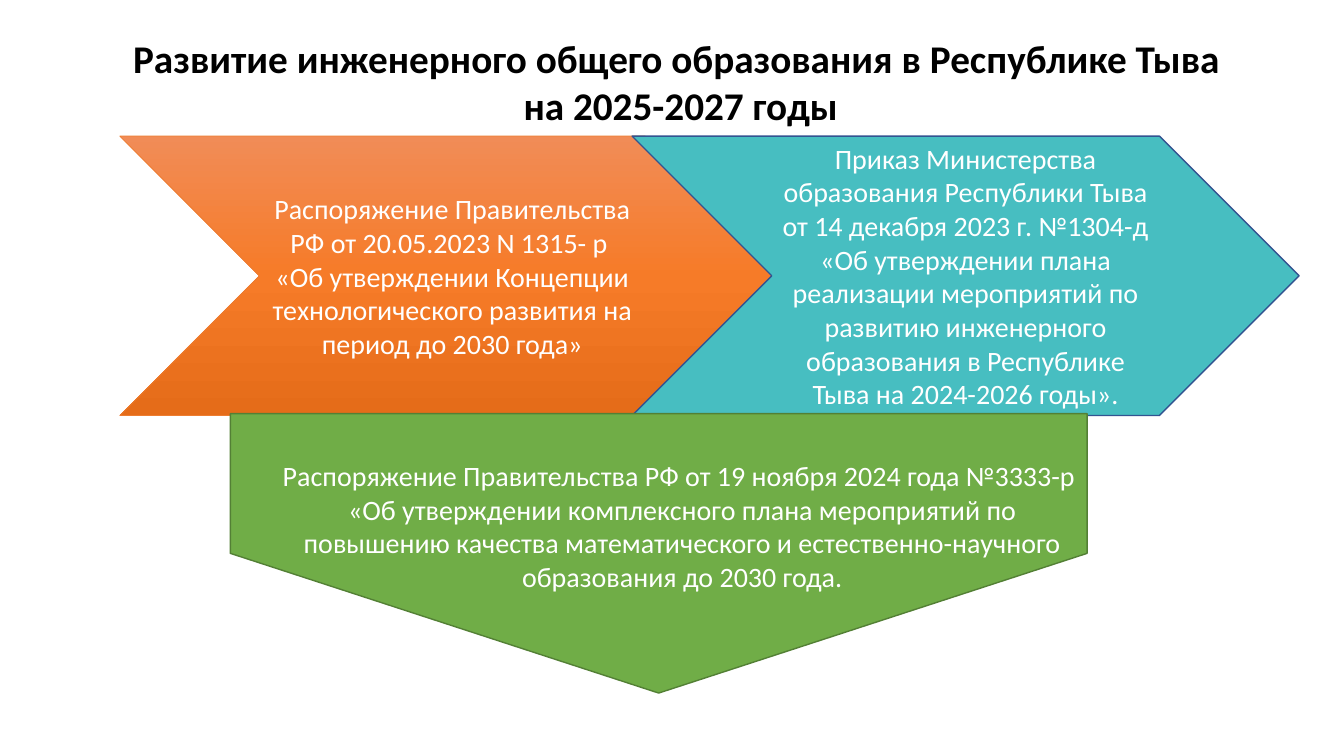
from copy import deepcopy
from dataclasses import dataclass
from typing import Optional

from pptx import Presentation
from pptx.dml.color import RGBColor as RGB
from pptx.enum.shapes import MSO_SHAPE as Shape
from pptx.enum.text import MSO_ANCHOR as Anchor, PP_ALIGN as Align
from pptx.oxml.ns import qn
from pptx.util import Cm, Pt


@dataclass(frozen=True)
class Theme:
    font: str = "Calibri"
    title_size: float = 28
    body_size: float = 20
    title: str = "000000"
    body: str = "FFFFFF"
    orange: tuple = ("F18C57", "F67B28", "E56C19")
    orange_line: str = "ED7D31"
    teal: tuple = ("47BEC1",)
    teal_line: str = "325491"
    green: tuple = ("70AD47",)
    green_line: str = "538035"


@dataclass(frozen=True)
class Box:
    left: float
    top: float
    width: float
    height: float

    def lengths(self) -> tuple:
        return Cm(self.left), Cm(self.top), Cm(self.width), Cm(self.height)


@dataclass(frozen=True)
class Arrow:
    kind: Shape
    box: Box
    fill: tuple
    line: str
    line_width: float
    paragraphs: tuple = ()
    rotation: float = 0


@dataclass(frozen=True)
class Label:
    box: Box
    paragraphs: tuple
    size: float
    color: str
    bold: Optional[bool] = None


THEME = Theme()
ROW_TOP, ARROW_DEPTH = 3.43, 7.04

ARROWS = (
    Arrow(Shape.CHEVRON, Box(3.02, ROW_TOP, 16.76, ARROW_DEPTH),
          THEME.orange, THEME.orange_line, 0.5,
          ("Распоряжение Правительства РФ от 20.05.2023 N 1315- р ",
           "«Об утверждении Концепции технологического развития на "
           "период до 2030 года»")),
    Arrow(Shape.CHEVRON, Box(15.93, ROW_TOP, 16.81, ARROW_DEPTH),
          THEME.teal, THEME.teal_line, 1,
          ("Приказ Министерства образования Республики Тыва "
           "от 14 декабря 2023 г. №1304-д «Об утверждении плана реализации "
           "мероприятий по развитию инженерного образования в Республике "
           "Тыва на 2024-2026 годы».",)),
    Arrow(Shape.PENTAGON, Box(13.08, 3.15, ARROW_DEPTH, 21.59),
          THEME.green, THEME.green_line, 1, rotation=90),
)

LABELS = (
    Label(Box(1.09, 0.74, 32.13, 2.64),
          ("Развитие инженерного общего образования в Республике Тыва ",
           "на 2025-2027 годы"),
          THEME.title_size, THEME.title, bold=True),
    Label(Box(6.73, 11.43, 20.93, 3.68),
          ("Распоряжение Правительства РФ от 19 ноября 2024 года №3333-р ",
           "«Об утверждении комплексного плана мероприятий по повышению "
           "качества математического и естественно-научного образования "
           "до 2030 года."),
          THEME.body_size, THEME.body),
)


def write(tf, paragraphs: tuple, size: float, color: str,
          bold: Optional[bool] = None) -> None:
    tf.word_wrap = True
    font_format = {"name": THEME.font, "size": Pt(size), "bold": bold}
    for i, text in enumerate(paragraphs):
        p = tf.add_paragraph() if i else tf.paragraphs[0]
        p.alignment = Align.CENTER
        r = p.add_run()
        r.text = text
        for name, value in font_format.items():
            setattr(r.font, name, value)
        r.font.color.rgb = RGB.from_string(color)


def paint(sp, colors: tuple) -> None:
    """Fill solidly with one colour, or top to bottom with evenly spaced stops."""
    if len(colors) == 1:
        sp.fill.solid()
        sp.fill.fore_color.rgb = RGB.from_string(colors[0])
        return
    sp.fill.gradient()
    sp.fill.gradient_angle = 270
    stops = next(sp._element.spPr.iter(qn("a:gsLst")))
    while len(stops) < len(colors):
        stops.append(deepcopy(stops[0]))
    for i, (stop, color) in enumerate(zip(sp.fill.gradient_stops, colors)):
        stop.position = i / (len(colors) - 1)
        stop.color.rgb = RGB.from_string(color)


def draw_arrow(slide, arrow: Arrow) -> None:
    sp = slide.shapes.add_shape(arrow.kind, *arrow.box.lengths())
    sp.rotation = arrow.rotation
    sp.shadow.inherit = False
    paint(sp, arrow.fill)
    sp.line.color.rgb = RGB.from_string(arrow.line)
    sp.line.width = Pt(arrow.line_width)
    sp.text_frame.vertical_anchor = Anchor.MIDDLE
    write(sp.text_frame, arrow.paragraphs, THEME.body_size, THEME.body)


def draw_label(slide, label: Label) -> None:
    tf = slide.shapes.add_textbox(*label.box.lengths()).text_frame
    write(tf, label.paragraphs, label.size, label.color, label.bold)


def main() -> None:
    prs = Presentation()
    prs.slide_width, prs.slide_height = Cm(33.87), Cm(19.05)
    slide = prs.slides.add_slide(prs.slide_layouts[6])
    title, decree = LABELS
    draw_label(slide, title)
    for arrow in ARROWS:
        draw_arrow(slide, arrow)
    draw_label(slide, decree)
    prs.save("out.pptx")


if __name__ == "__main__":
    main()
